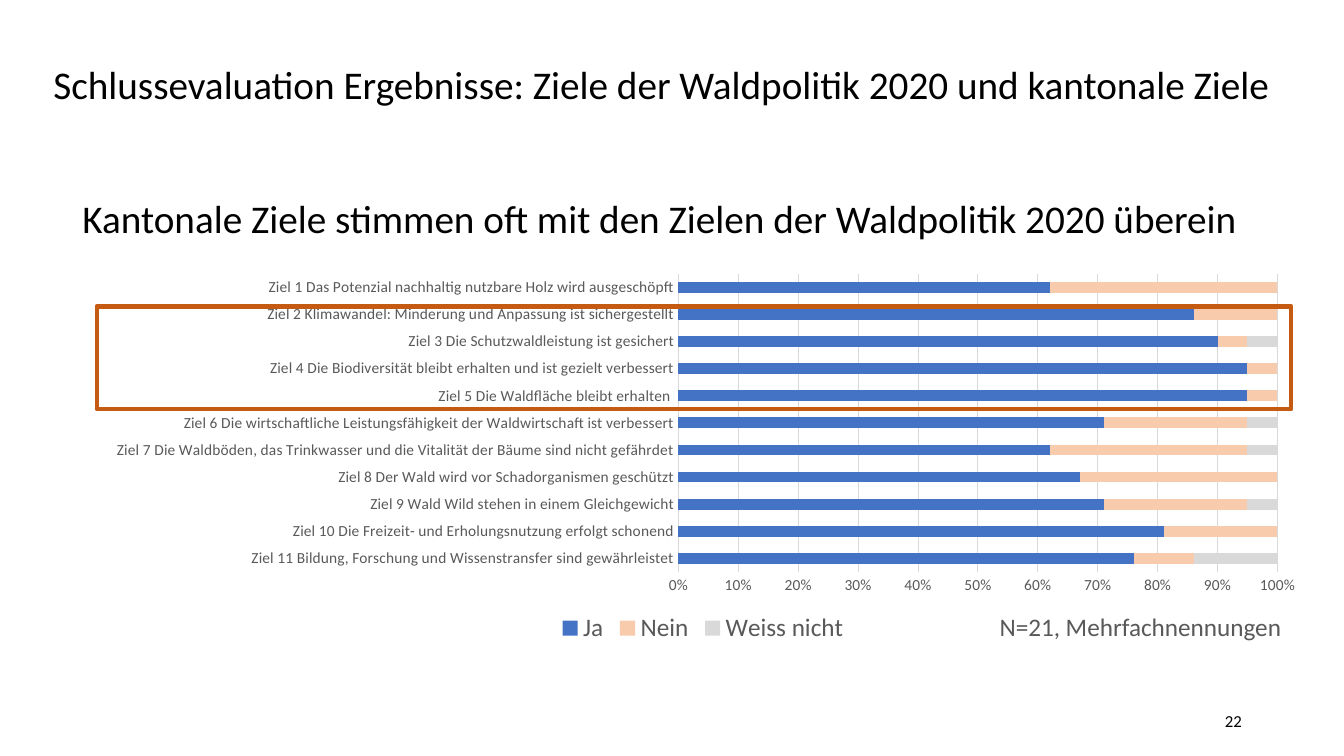
"""Build the slide comparing cantonal goals with the Waldpolitik 2020 goals."""
from dataclasses import dataclass

from lxml import etree
from pptx import Presentation
from pptx.chart.chart import Chart
from pptx.chart.data import CategoryChartData
from pptx.dml.color import RGBColor
from pptx.enum.chart import XL_CHART_TYPE, XL_LEGEND_POSITION, XL_TICK_MARK
from pptx.enum.shapes import MSO_SHAPE
from pptx.enum.text import MSO_ANCHOR, MSO_AUTO_SIZE, PP_ALIGN
from pptx.oxml.ns import qn
from pptx.slide import Slide
from pptx.text.text import Font, TextFrame
from pptx.util import Cm, Pt

STACKED_BAR = XL_CHART_TYPE.BAR_STACKED_100
LEGEND_BOTTOM = XL_LEGEND_POSITION.BOTTOM
NO_TICKS = XL_TICK_MARK.NONE
RECTANGLE = MSO_SHAPE.RECTANGLE
TOP, MIDDLE = MSO_ANCHOR.TOP, MSO_ANCHOR.MIDDLE
NO_AUTOFIT = MSO_AUTO_SIZE.NONE
LEFT, RIGHT = PP_ALIGN.LEFT, PP_ALIGN.RIGHT

BLACK = RGBColor(0x00, 0x00, 0x00)
GREY = RGBColor(0x59, 0x59, 0x59)
LIGHT_GREY = RGBColor(0xD9, 0xD9, 0xD9)
BLUE = RGBColor(0x44, 0x72, 0xC4)
PEACH = RGBColor(0xF8, 0xCB, 0xAD)
ORANGE = RGBColor(0xC5, 0x5A, 0x11)
FONT_NAME = "Calibri"
TITLE_ONLY_LAYOUT = 5


@dataclass(frozen=True)
class Box:
    left: float
    top: float
    width: float
    height: float

    def lengths(self) -> tuple[Cm, Cm, Cm, Cm]:
        return Cm(self.left), Cm(self.top), Cm(self.width), Cm(self.height)


@dataclass(frozen=True)
class Label:
    text: str
    box: Box
    size: int
    color: RGBColor = BLACK
    alignment: PP_ALIGN = LEFT
    anchor: MSO_ANCHOR = TOP
    line_spacing: float = 1.0


@dataclass(frozen=True)
class Answer:
    name: str
    color: RGBColor
    values: tuple[int, ...]


TITLE = Label("Schlussevaluation Ergebnisse: Ziele der Waldpolitik 2020 und kantonale Ziele",
              Box(1.09, 0.89, 32.05, 3.68), 28, anchor=MIDDLE, line_spacing=0.9)
LABELS = (
    Label("Kantonale Ziele stimmen oft mit den Zielen der Waldpolitik 2020 überein",
          Box(1.83, 4.9, 31.32, 12.09), 28, line_spacing=0.9),
    Label("N=21, Mehrfachnennungen", Box(24.94, 15.27, 8.6, 1.02), 18, GREY),
    Label("22", Box(23.93, 17.65, 7.62, 1.02), 12, alignment=RIGHT, anchor=MIDDLE),
)
CHART_BOX = Box(2.31, 6.71, 30.81, 9.63)
PLOT_LAYOUT = {"x": 0.48, "y": 0.02, "w": 0.49, "h": 0.78}
HIGHLIGHT_BOX = Box(2.44, 7.72, 30.1, 2.59)
GOALS = (
    "Ziel 11 Bildung, Forschung und Wissenstransfer sind gewährleistet",
    "Ziel 10 Die Freizeit- und Erholungsnutzung erfolgt schonend",
    "Ziel 9 Wald Wild stehen in einem Gleichgewicht",
    "Ziel 8 Der Wald wird vor Schadorganismen geschützt",
    "Ziel 7 Die Waldböden, das Trinkwasser und die Vitalität der Bäume sind nicht gefährdet",
    "Ziel 6 Die wirtschaftliche Leistungsfähigkeit der Waldwirtschaft ist verbessert",
    "Ziel 5 Die Waldfläche bleibt erhalten ",
    "Ziel 4 Die Biodiversität bleibt erhalten und ist gezielt verbessert",
    "Ziel 3 Die Schutzwaldleistung ist gesichert",
    "Ziel 2 Klimawandel: Minderung und Anpassung ist sichergestellt",
    "Ziel 1 Das Potenzial nachhaltig nutzbare Holz wird ausgeschöpft",
)
ANSWERS = (
    Answer("Ja", BLUE, (76, 81, 71, 67, 62, 71, 95, 95, 90, 86, 62)),
    Answer("Nein", PEACH, (10, 19, 24, 33, 33, 24, 5, 5, 5, 14, 38)),
    Answer("Weiss nicht", LIGHT_GREY, (14, 0, 5, 0, 5, 5, 0, 0, 5, 0, 0)),
)


def format_font(font: Font, size: int, color: RGBColor) -> None:
    font.name = FONT_NAME
    font.size = Pt(size)
    font.color.rgb = color


def write_label(frame: TextFrame, label: Label) -> None:
    frame.word_wrap = True
    frame.auto_size = NO_AUTOFIT
    frame.vertical_anchor = label.anchor
    paragraph = frame.paragraphs[0]
    paragraph.alignment = label.alignment
    paragraph.line_spacing = label.line_spacing
    run = paragraph.add_run()
    run.text = label.text
    format_font(run.font, label.size, label.color)


def add_title(slide: Slide) -> None:
    title = slide.shapes.title
    title.left, title.top, title.width, title.height = TITLE.box.lengths()
    write_label(title.text_frame, TITLE)
    title.text_frame.margin_bottom = Cm(1.2)


def add_label(slide: Slide, label: Label) -> None:
    write_label(slide.shapes.add_textbox(*label.box.lengths()).text_frame, label)


def place_plot(chart: Chart) -> None:
    plot_area = chart.plots[0]._element.getparent()
    for layout in plot_area.findall(qn("c:layout")):
        plot_area.remove(layout)
    layout = etree.Element(qn("c:layout"))
    manual = etree.SubElement(layout, qn("c:manualLayout"))
    settings = {"layoutTarget": "inner", "xMode": "edge", "yMode": "edge", **PLOT_LAYOUT}
    for name, value in settings.items():
        etree.SubElement(manual, qn(f"c:{name}")).set("val", str(value))
    plot_area.insert(0, layout)


def add_goal_chart(slide: Slide) -> None:
    data = CategoryChartData()
    data.categories = GOALS
    for answer in ANSWERS:
        data.add_series(answer.name, answer.values)
    chart = slide.shapes.add_chart(STACKED_BAR, *CHART_BOX.lengths(), data).chart
    format_font(chart.font, 11, BLACK)
    chart.has_title = False

    plot = chart.plots[0]
    plot.vary_by_categories = False
    plot.gap_width = 150
    plot.overlap = 100
    for series, answer in zip(plot.series, ANSWERS):
        series.format.fill.solid()
        series.format.fill.fore_color.rgb = answer.color

    for axis in (chart.category_axis, chart.value_axis):
        axis.major_tick_mark = NO_TICKS
        axis.minor_tick_mark = NO_TICKS
        format_font(axis.tick_labels.font, 11, GREY)
    chart.value_axis.tick_labels.number_format = "0%"
    chart.value_axis.tick_labels.number_format_is_linked = False
    chart.value_axis.format.line.fill.background()
    chart.value_axis.has_major_gridlines = True
    for line in (chart.category_axis.format.line, chart.value_axis.major_gridlines.format.line):
        line.color.rgb = LIGHT_GREY
        line.width = Pt(0.75)

    chart.has_legend = True
    chart.legend.position = LEGEND_BOTTOM
    chart.legend.include_in_layout = False
    format_font(chart.legend.font, 18, GREY)
    place_plot(chart)


def add_highlight(slide: Slide) -> None:
    frame = slide.shapes.add_shape(RECTANGLE, *HIGHLIGHT_BOX.lengths())
    frame.shadow.inherit = False
    frame.fill.background()
    frame.line.color.rgb = ORANGE
    frame.line.width = Pt(3.25)


def main() -> None:
    presentation = Presentation()
    presentation.slide_width = Cm(33.87)
    presentation.slide_height = Cm(19.05)
    slide = presentation.slides.add_slide(presentation.slide_layouts[TITLE_ONLY_LAYOUT])
    add_title(slide)
    add_goal_chart(slide)
    for label in LABELS:
        add_label(slide, label)
    add_highlight(slide)
    presentation.save("out.pptx")


if __name__ == "__main__":
    main()
